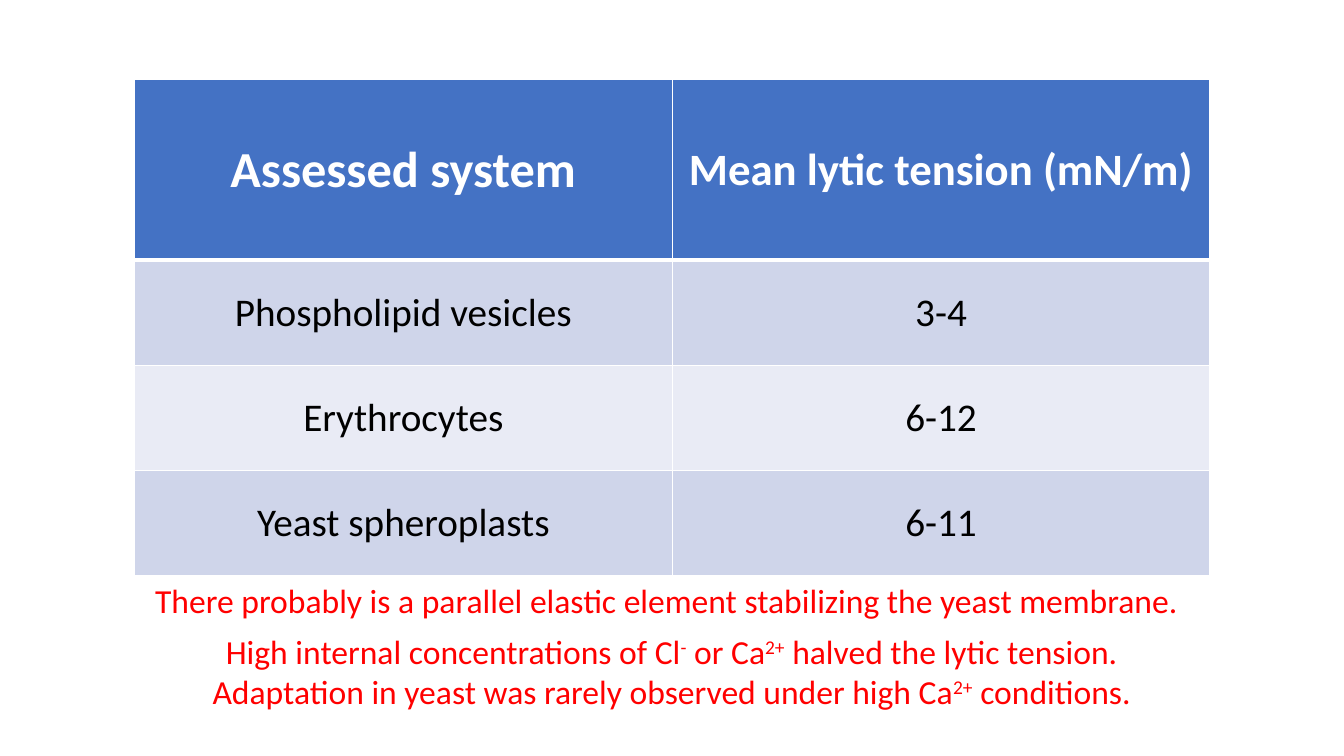
"""Build a slide with a table of mean lytic tensions and two notes below it."""
from lxml import etree
from pptx import Presentation
from pptx.dml.color import RGBColor
from pptx.enum.text import MSO_ANCHOR, MSO_AUTO_SIZE, PP_ALIGN
from pptx.oxml.ns import qn
from pptx.util import Cm, Pt

CENTER, LEFT = PP_ALIGN.CENTER, PP_ALIGN.LEFT
MIDDLE = MSO_ANCHOR.MIDDLE
GROW = MSO_AUTO_SIZE.SHAPE_TO_FIT_TEXT

TENSIONS = [
    ("Assessed system", "Mean lytic tension (mN/m)"),
    ("Phospholipid vesicles", "3-4"),
    ("Erythrocytes", "6-12"),
    ("Yeast spheroplasts", "6-11"),
]
HEADER_SIZES = (36, 32)
BODY_SIZE, NOTE_SIZE = 28, 24
HEADER_FILL, BAND_FILLS = "4472C4", ("CFD5EA", "E9EBF5")
WHITE, BLACK, RED = "FFFFFF", "000000", "FF0000"
HEADER_HEIGHT, ROW_HEIGHT, COLUMN_WIDTH = 4.55, 2.65, 13.55
TABLE_LEFT, TABLE_TOP = 3.39, 2.01

NOTES = [
    {
        "box": (3.66, 14.48, 26.54, 1.27), "wrap": False, "align": LEFT,
        "pieces": [("There probably is a parallel elastic element "
                    "stabilizing the yeast membrane.", False)],
    },
    {
        "box": (4.24, 15.77, 25.37, 2.31), "wrap": True, "align": CENTER,
        "pieces": [
            ("High internal concentrations of Cl", False), ("-", True),
            (" or Ca", False), ("2+", True),
            (" halved the lytic tension. Adaptation in yeast was rarely "
             "observed under high Ca", False), ("2+", True),
            (" conditions.", False),
        ],
    },
]


def color(value):
    return RGBColor.from_string(value)


def style(font, size, hue, bold=False):
    font.name, font.size, font.bold = "Calibri", Pt(size), bold
    font.color.rgb = color(hue)


def add_borders(cell, widths):
    properties = cell._tc.get_or_add_tcPr()
    for position, (side, width) in enumerate(widths.items()):
        line = etree.Element(qn(f"a:ln{side}"), w=str(Pt(width)))
        fill = etree.SubElement(line, qn("a:solidFill"))
        etree.SubElement(fill, qn("a:srgbClr"), val=WHITE)
        properties.insert(position, line)


def add_tensions(slide):
    rows, columns = len(TENSIONS), len(TENSIONS[0])
    height = HEADER_HEIGHT + (rows - 1) * ROW_HEIGHT
    table = slide.shapes.add_table(
        rows, columns, Cm(TABLE_LEFT), Cm(TABLE_TOP),
        Cm(columns * COLUMN_WIDTH), Cm(height)).table
    for column in table.columns:
        column.width = Cm(COLUMN_WIDTH)
    for r, values in enumerate(TENSIONS):
        header = r == 0
        table.rows[r].height = Cm(HEADER_HEIGHT if header else ROW_HEIGHT)
        for c, value in enumerate(values):
            cell = table.cell(r, c)
            cell.text = value
            cell.vertical_anchor = MIDDLE
            cell.fill.solid()
            cell.fill.fore_color.rgb = color(
                HEADER_FILL if header else BAND_FILLS[(r - 1) % 2])
            add_borders(cell, {"L": 1, "R": 1, "T": 3 if r == 1 else 1,
                               "B": 3 if header else 1})
            paragraph = cell.text_frame.paragraphs[0]
            paragraph.alignment = CENTER
            style(paragraph.runs[0].font,
                  HEADER_SIZES[c] if header else BODY_SIZE,
                  WHITE if header else BLACK, header)


def add_note(slide, note):
    frame = slide.shapes.add_textbox(*map(Cm, note["box"])).text_frame
    frame.word_wrap = note["wrap"]
    frame.auto_size = GROW
    paragraph = frame.paragraphs[0]
    paragraph.alignment = note["align"]
    for text, raised in note["pieces"]:
        run = paragraph.add_run()
        run.text = text
        style(run.font, NOTE_SIZE, RED)
        if raised:
            run.font._element.set("baseline", "30000")


def main():
    deck = Presentation()
    deck.slide_width, deck.slide_height = Cm(33.87), Cm(19.05)
    slide = deck.slides.add_slide(deck.slide_layouts[6])
    add_tensions(slide)
    for note in NOTES:
        add_note(slide, note)
    deck.save("out.pptx")


if __name__ == "__main__":
    main()
